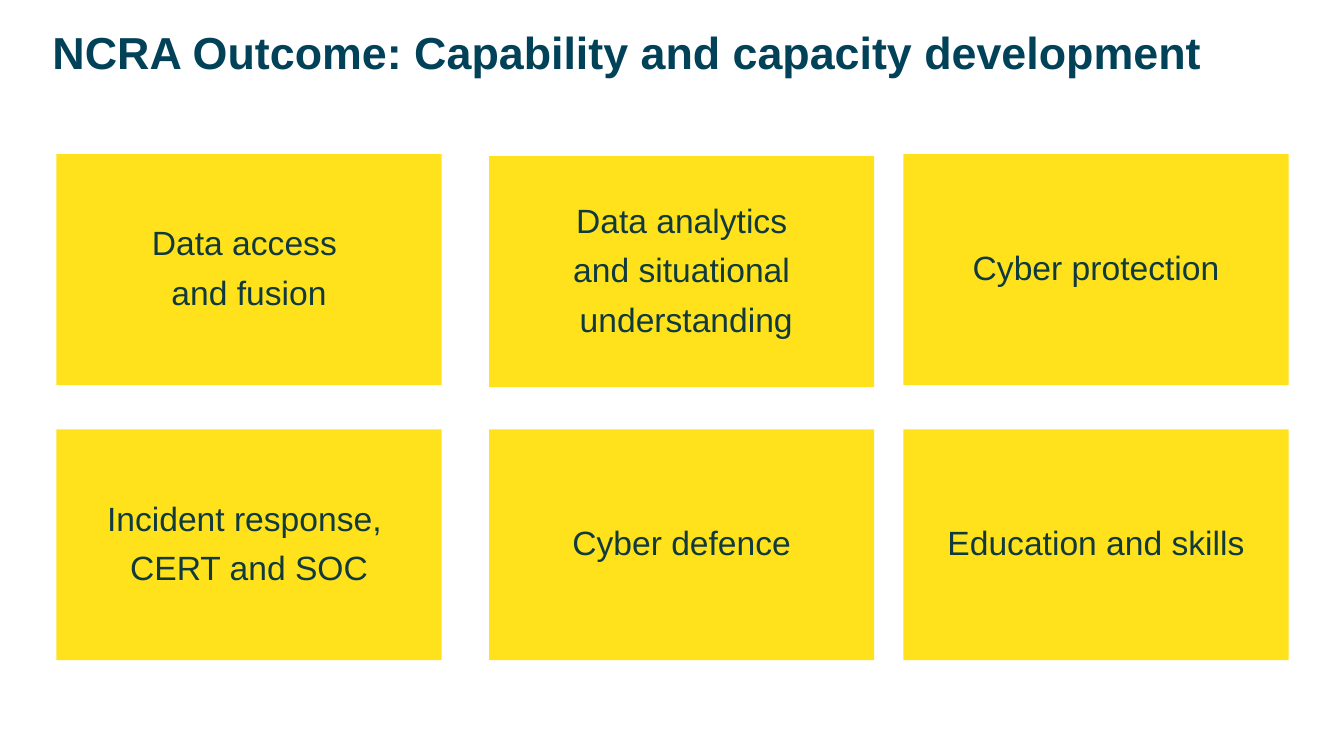
from pptx import Presentation
from pptx import util as u
from pptx.dml.color import RGBColor
from pptx.enum import shapes, text

NAVY = RGBColor(0x02, 0x42, 0x59)
INK = RGBColor(0x10, 0x3A, 0x3E)
YELLOW = RGBColor(0xFF, 0xE2, 0x1B)
WHITE = RGBColor(0xFF, 0xFF, 0xFF)

LEFTS = (0.56, 4.85, 8.96)
ROWS = (
    (1.53, ("Data access \nand fusion",
            "Data analytics\nand situational\n understanding",
            "Cyber protection")),
    (4.26, ("Incident response, \nCERT and SOC",
            "Cyber defence",
            "Education and skills")),
)
CARD_SIZE = (3.82, 2.29)
MIDDLE_CARD_DROP = 0.02


def set_values(target, values):
    for name, value in values.items():
        setattr(target, name, value)


class Deck:
    title_font = {"name": "Arial", "size": u.Pt(32), "bold": True}
    card_font = {"name": "Arial", "size": u.Pt(24), "bold": False}

    def __init__(self):
        self.prs = Presentation()
        set_values(self.prs, {"slide_width": u.Inches(13.33),
                              "slide_height": u.Inches(7.5)})
        self.s = self.prs.slides.add_slide(self.prs.slide_layouts[5])
        self.s.background.fill.solid()
        self.s.background.fill.fore_color.rgb = WHITE

    def fill_text(self, tf, content, font, color, align, inset, gap):
        margin = u.Inches(inset)
        set_values(tf, {"word_wrap": True, "auto_size": text.MSO_AUTO_SIZE.NONE,
                        "vertical_anchor": text.MSO_ANCHOR.MIDDLE,
                        "margin_left": margin, "margin_top": margin,
                        "margin_right": margin, "margin_bottom": margin})
        tf.text = content
        for p in tf.paragraphs:
            set_values(p, {"alignment": align, "line_spacing": 0.9,
                           "space_before": u.Pt(0), "space_after": u.Pt(gap)})
            for r in p.runs:
                set_values(r.font, font)
                r.font.color.rgb = color

    def title(self, content, left, top, width, height):
        sp = self.s.shapes.title
        set_values(sp, {"left": u.Inches(left), "top": u.Inches(top),
                        "width": u.Inches(width), "height": u.Inches(height)})
        self.fill_text(sp.text_frame, content, self.title_font, NAVY,
                       text.PP_ALIGN.LEFT, 0, 0)

    def card(self, content, left, top, width, height):
        sp = self.s.shapes.add_shape(
            shapes.MSO_SHAPE.RECTANGLE, u.Inches(left), u.Inches(top),
            u.Inches(width), u.Inches(height))
        sp.shadow.inherit = False
        sp.fill.solid()
        sp.fill.fore_color.rgb = YELLOW
        sp.line.fill.background()
        self.fill_text(sp.text_frame, content, self.card_font, INK,
                       text.PP_ALIGN.CENTER, 0.1, 9.4)


def main():
    deck = Deck()
    deck.title("NCRA Outcome: Capability and capacity development",
               0.52, 0.22, 11.93, 0.66)
    for row, (top, labels) in enumerate(ROWS):
        for col, (left, label) in enumerate(zip(LEFTS, labels)):
            drop = MIDDLE_CARD_DROP if (row, col) == (0, 1) else 0
            deck.card(label, left, top + drop, *CARD_SIZE)
    deck.prs.save("out.pptx")


if __name__ == "__main__":
    main()
